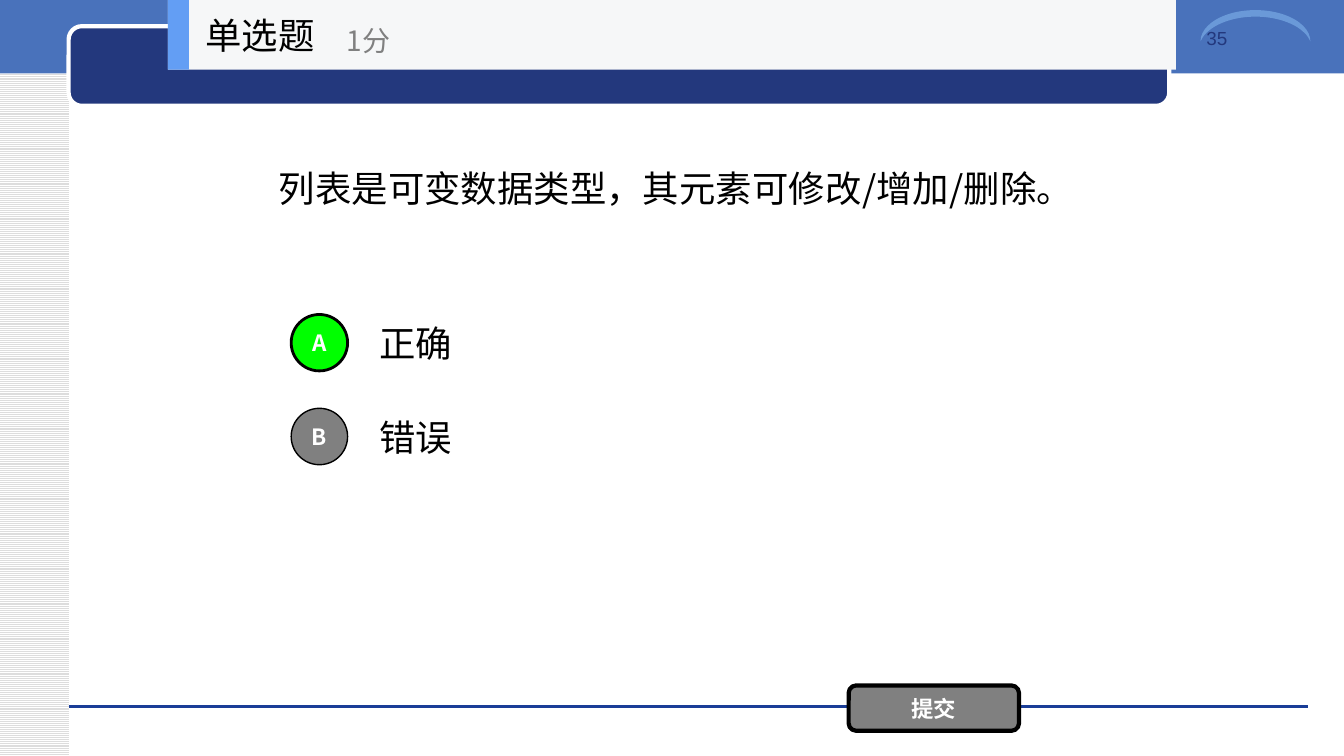
from lxml import etree
from pptx import Presentation
from pptx.dml.color import RGBColor
from pptx.enum.dml import MSO_PATTERN
from pptx.enum.shapes import MSO_CONNECTOR, MSO_SHAPE
from pptx.enum.text import MSO_ANCHOR, MSO_AUTO_SIZE, PP_ALIGN
from pptx.oxml.ns import qn
from pptx.util import Pt

RECT, ROUND = MSO_SHAPE.RECTANGLE, MSO_SHAPE.ROUNDED_RECTANGLE
OVAL, MOON = MSO_SHAPE.OVAL, MSO_SHAPE.MOON
HATCH = MSO_PATTERN.LIGHT_HORIZONTAL
STRAIGHT = MSO_CONNECTOR.STRAIGHT
TOP, MIDDLE = MSO_ANCHOR.TOP, MSO_ANCHOR.MIDDLE
LEFT, CENTER = PP_ALIGN.LEFT, PP_ALIGN.CENTER
NO_FIT = MSO_AUTO_SIZE.NONE

# Content
KIND, SCORE, PAGE = "单选题", "1分", "35"
QUESTION = "列表是可变数据类型，其元素可修改/增加/删除。"
OPTIONS = [("A", "正确", "right", 2), ("B", "错误", "gray", 1)]
SUBMIT = "提交"

FONT = "Noto Sans CJK SC"
COLORS = {
    "white": "FFFFFF", "black": "000000", "gray": "808080", "hatch": "DDDDDD",
    "band": "4972BB", "rule": "1A3D97", "navy": "23387D", "arc": "6A99D8",
    "right": "00FF00", "panel": "F6F7F8", "accent": "639EF4",
}

# Layout
WIDE, HIGH = 960, 540
MARGIN = 49
HEAD_X, HEAD_H = 120, 49.7
ROW_Y, ROW_H, ROW_GAP = 219.6, 50.4, 67
DOT = 40.3


def color(name):
    return RGBColor.from_string(COLORS[name])


def write(shape, text, size, tint="black", font=FONT, bold=False,
          align=LEFT, anchor=MIDDLE):
    frame = shape.text_frame
    frame.text = text
    frame.word_wrap = True
    frame.auto_size = NO_FIT
    frame.vertical_anchor = anchor
    para = frame.paragraphs[0]
    para.alignment = align
    run = para.runs[0]
    run.font.size = Pt(size)
    run.font.bold = bold
    run.font.color.rgb = color(tint)
    run.font.name = font
    east = etree.SubElement(run.font._element, qn("a:ea"))
    east.set("typeface", font)


def place(shape, *box):
    shape.left, shape.top, shape.width, shape.height = map(Pt, box)


def label(box, *args, **style):
    shape = slide.shapes.add_textbox(*map(Pt, box))
    write(shape, *args, **style)


def draw(kind, box, fill, line=None, width=1):
    shape = slide.shapes.add_shape(kind, *map(Pt, box))
    shape.shadow.inherit = False
    shape.fill.solid()
    shape.fill.fore_color.rgb = color(fill)
    if line:
        shape.line.color.rgb = color(line)
        shape.line.width = Pt(width)
    else:
        shape.line.fill.background()
    return shape


def badge(kind, box, text, fill, width):
    shape = draw(kind, box, fill, "black", width)
    write(shape, text, 16, "white", bold=True, align=CENTER)
    frame = shape.text_frame
    frame.margin_left = frame.margin_right = Pt(0)
    frame.margin_top = frame.margin_bottom = Pt(0)


deck = Presentation()
deck.slide_width, deck.slide_height = Pt(WIDE), Pt(HIGH)
slide = deck.slides.add_slide(deck.slide_layouts[5])

# Question
title = slide.shapes.title
place(title, 192, 49.7, 576, 168.5)
write(title, QUESTION, 26)

# Backdrop
side = draw(RECT, (0, 0, MARGIN, HIGH), "hatch")
side.fill.patterned()
side.fill.pattern = HATCH
side.fill.fore_color.rgb = color("hatch")
side.fill.back_color.rgb = color("white")
draw(RECT, (0, 0, WIDE, 52.5), "band")
rule = slide.shapes.add_connector(
    STRAIGHT, Pt(MARGIN), Pt(504.7), Pt(934), Pt(504.7))
rule.line.color.rgb = color("rule")
rule.line.width = Pt(0)
etree.SubElement(rule._element.spPr, qn("a:effectLst"))
draw(ROUND, (MARGIN, 18.7, 786.2, 56.9), "navy", "white", 3)
arc = draw(MOON, (885.6, -20.9, 22.3, 78.5), "arc")
arc.adjustments[0] = 0.21
arc.rotation = 90
label((854.6, 15.1, 87, 51), PAGE, 13.5, "navy", font="Arial", anchor=TOP)

# Options
for row, (mark, text, fill, width) in enumerate(OPTIONS):
    y = ROW_Y + row * ROW_GAP
    label((264, y, 504, ROW_H), text, 26)
    badge(OVAL, (208, y + (ROW_H - DOT) / 2, DOT, DOT), mark, fill, width)

# Submit button
badge(ROUND, (606.2, 489.6, 121.7, 32.4), SUBMIT, "gray", 3)

# Header
draw(RECT, (HEAD_X, 0, 720, HEAD_H), "panel")
draw(RECT, (HEAD_X, 0, 15, HEAD_H), "accent")
label((139.7, 0, 150, HEAD_H), KIND, 26)
label((240.5, 8.6, 180, 40.3), SCORE, 20, "gray")

deck.save("out.pptx")
